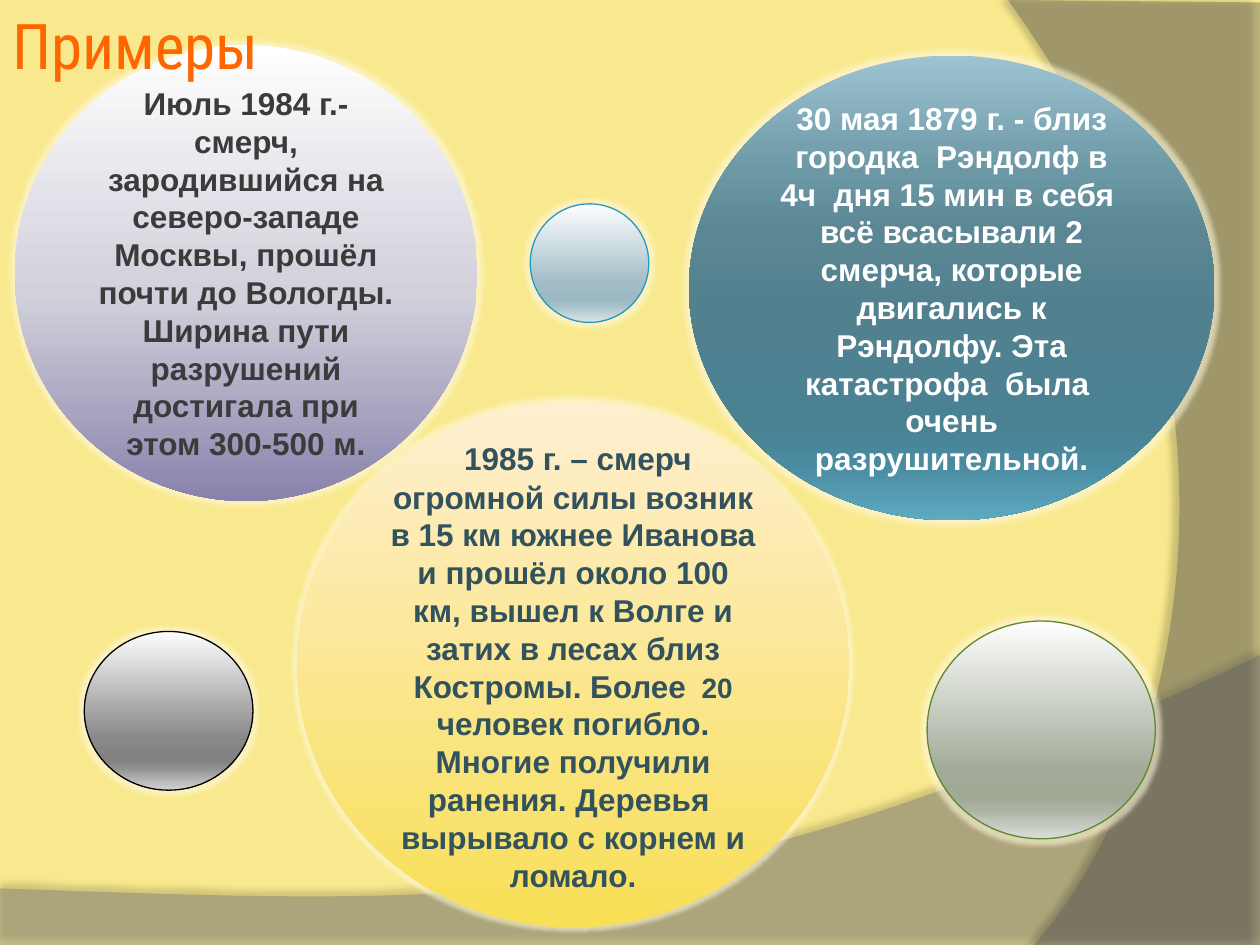
from lxml.etree import SubElement
from pptx import Presentation
from pptx.dml.color import RGBColor
from pptx.enum.shapes import MSO_SHAPE as Shape
from pptx.enum.text import MSO_ANCHOR as Anchor, PP_ALIGN as Align
from pptx.oxml.ns import qn
from pptx.util import Cm, Pt

WIDTH, HEIGHT = 25.4, 19.05
CURVE_STEPS = 40


def color(value):
    return RGBColor.from_string(value)


def add_color(parent, value, opacity=100):
    node = SubElement(parent, qn("a:srgbClr"), val=value)
    if opacity < 100:
        SubElement(node, qn("a:alpha"), val=str(opacity * 1000))


def add_effect(shape, kind, value, opacity, **attributes):
    """Give the shape one effect; lengths are in EMU, angles in 1/60000 degree."""
    shape.shadow.inherit = False
    effects = shape._element.spPr.find(qn("a:effectLst"))
    effect = SubElement(effects, qn(f"a:{kind}"),
                        {name: str(number) for name, number in attributes.items()})
    add_color(effect, value, opacity)


def fill_gradient(shape, stops):
    """Fill from top to bottom with (percent, colour) stops."""
    shape.fill.gradient()
    shape.fill.gradient_angle = 270
    stop_list = shape._element.spPr.find(qn("a:gradFill")).find(qn("a:gsLst"))
    for old_stop in list(stop_list):
        stop_list.remove(old_stop)
    for percent, value in stops:
        add_color(SubElement(stop_list, qn("a:gs"), pos=str(percent * 1000)), value)


def add_text(paragraph, text, size=18, font="Arial", ink="FFFFFF", bold=True):
    run = paragraph.add_run()
    run.text = text
    run.font.size = Pt(size)
    run.font.name = font
    run.font.bold = bold
    run.font.color.rgb = color(ink)


def curve_points(start, control1, control2, end):
    """Points along a cubic curve, without its start."""
    for step in range(1, CURVE_STEPS + 1):
        t = step / CURVE_STEPS
        weights = ((1 - t) ** 3, 3 * t * (1 - t) ** 2, 3 * t * t * (1 - t), t ** 3)
        yield tuple(sum(w * p[axis] for w, p in zip(weights, (start, control1, control2, end)))
                    for axis in (0, 1))


def add_wave(slide, corners, curve, value, opacity, shadow_opacity, shadow_angle):
    """Translucent area bounded by straight corners and a curve from the last corner."""
    points = [(Cm(x), Cm(y)) for x, y in [*corners, *curve_points(corners[-1], *curve)]]
    builder = slide.shapes.build_freeform(*points[0])
    builder.add_line_segments(points[1:], close=True)
    wave = builder.convert_to_shape()
    wave.fill.solid()
    wave.fill.fore_color.rgb = color(value)
    SubElement(wave._element.spPr.find(qn("a:solidFill"))[0],
               qn("a:alpha"), val=str(opacity * 1000))
    wave.line.fill.background()
    add_effect(wave, "outerShdw", "000000", shadow_opacity,
               blurRad=Pt(4), dist=Pt(4), dir=shadow_angle * 60000)


def add_ball(slide, box, stops, outline=None):
    ball = slide.shapes.add_shape(Shape.OVAL, *map(Cm, box))
    fill_gradient(ball, stops)
    if outline:
        ball.line.color.rgb = color(outline)
        ball.line.width = Pt(0.75)
    else:
        ball.line.fill.background()
    add_effect(ball, "glow", "FFF8DC", 60, rad=Pt(5))
    return ball


def add_story(slide, box, stops, ink, parts):
    """Ball with a centred story made of (text, size) parts."""
    frame = add_ball(slide, box, stops).text_frame
    frame.word_wrap = True
    frame.vertical_anchor = Anchor.MIDDLE
    paragraph = frame.paragraphs[0]
    paragraph.alignment = Align.CENTER
    for text, size in parts:
        add_text(paragraph, text, size=size, ink=ink)


def add_title(slide, box, text):
    frame = slide.shapes.add_textbox(*map(Cm, box)).text_frame
    frame.word_wrap = True
    frame.vertical_anchor = Anchor.MIDDLE
    add_text(frame.paragraphs[0], text, size=36, font="Roboto Condensed",
             ink="FF6600", bold=False)


def add_backdrop(slide):
    slide.background.fill.solid()
    slide.background.fill.fore_color.rgb = color("F9E98E")
    add_wave(slide, [(0, 17.91), (0, HEIGHT), (WIDTH, HEIGHT), (WIDTH, 13.21)],
             [(14.2, 18.52), (9.93, 18.26), (0, 17.91)], "7F7F7F", 45, 35, 270)
    add_wave(slide, [(WIDTH, 0.05), (WIDTH, HEIGHT), (20.85, HEIGHT)],
             [(23.75, 15.72), (25.86, 7.62), (20.32, 0)], "5E5E5E", 40, 45, 180)


STORIES = [
    ((5.99, 8.1, 11.13, 10.59), [(0, "FFEFD1"), (100, "F7DF56")], "32525D",
     [(" ", 20),
      ("1985 г. – смерч огромной силы возник в 15 км южнее Иванова и прошёл около "
       "100 км, вышел к Волге и затих в лесах близ Костромы. Более", 18),
      ("  20 ", 16),
      ("человек погибло. Многие получили ранения. Деревья  вырывало с корнем "
       "и ломало.", 18)]),
    ((0.3, 0.91, 9.32, 9.19), [(0, "FFFFFF"), (55, "D1D0DB"), (100, "8982AC")], "3B3B3B",
     [("Июль 1984 г.- смерч, зародившийся на северо-западе Москвы, прошёл почти "
       "до Вологды. Ширина пути разрушений достигала при этом 300-500 м.", 18)]),
    ((13.89, 1.12, 10.59, 9.37),
     [(0, "9EC4D2"), (25, "6C97A5"), (38, "5B8694"), (55, "51808F"),
      (80, "4A8294"), (88, "4A8BA0"), (100, "5DAAC2")], "FFFFFF",
     [("30 мая 1879 г. - близ городка  Рэндолф в 4ч  дня 15 мин в себя  всё "
       "всасывали 2 смерча, которые двигались к Рэндолфу. Эта катастрофа  была  "
       "очень разрушительной.", 18)]),
]

GLOSS_STOPS = (0, 68, 81, 86, 100)
SMALL_BALLS = [
    ((1.7, 12.73, 3.4, 3.2), "000000", ("FEFEFE", "878787", "818181", "909090", "D3D3D3")),
    ((10.69, 4.11, 2.39, 2.39), "239BC2", ("FEFEFE", "A0BCC6", "9CB9C4", "A7C0C9", "DAE4E7")),
    ((18.69, 12.52, 4.6, 4.39), "5F882F", ("FEFEFE", "A3AC9A", "9FA996", "A9B1A1", "DBDED9")),
]


def main():
    deck = Presentation()
    deck.slide_width, deck.slide_height = Cm(WIDTH), Cm(HEIGHT)
    slide = deck.slides.add_slide(deck.slide_layouts[6])
    add_backdrop(slide)
    for story in STORIES:
        add_story(slide, *story)
    for box, outline, tones in SMALL_BALLS:
        add_ball(slide, box, zip(GLOSS_STOPS, tones), outline)
    add_title(slide, (0, 0, WIDTH, 1.78), "Примеры")
    deck.save("out.pptx")


if __name__ == "__main__":
    main()
